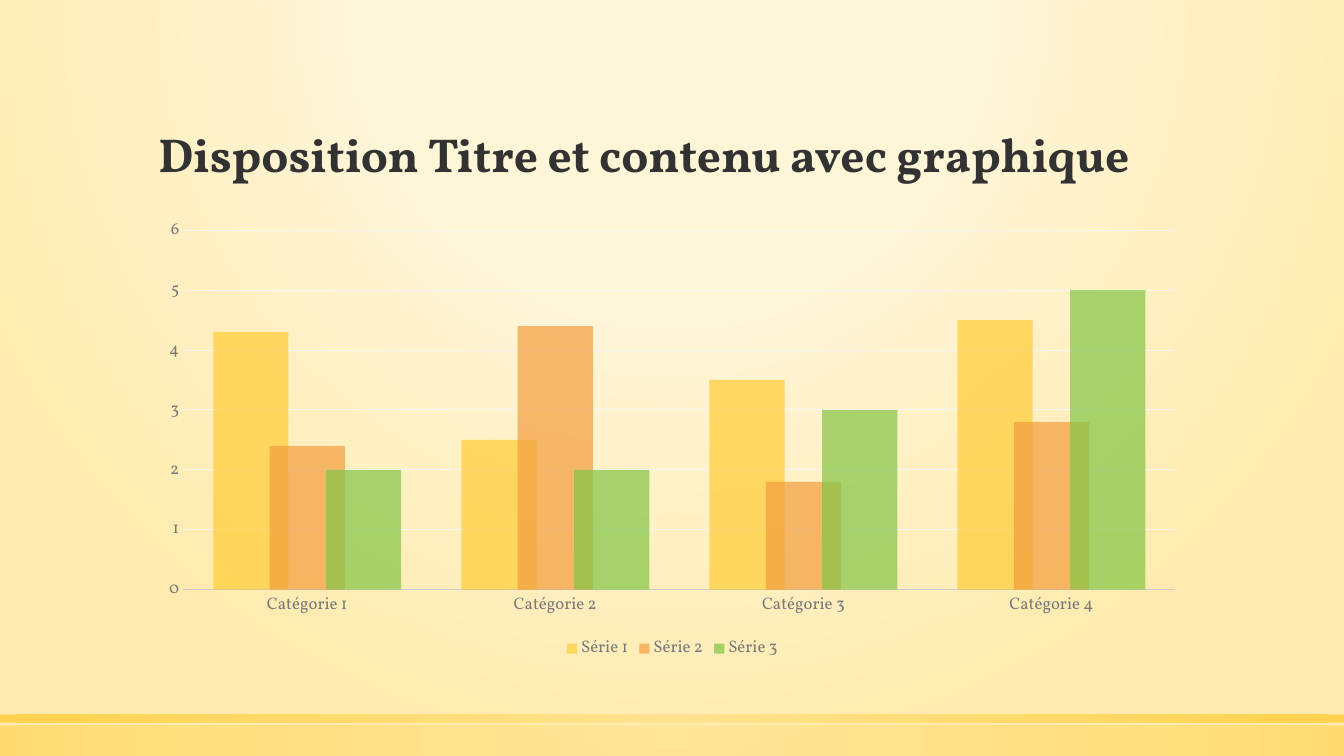
from dataclasses import dataclass

from lxml.etree import SubElement
from pptx import Presentation
from pptx.chart.data import CategoryChartData
from pptx.dml.color import RGBColor
from pptx.enum.chart import XL_CHART_TYPE, XL_LEGEND_POSITION, XL_TICK_MARK
from pptx.enum.shapes import MSO_SHAPE
from pptx.enum.text import MSO_ANCHOR, MSO_AUTO_SIZE, PP_ALIGN
from pptx.oxml import parse_xml
from pptx.oxml.ns import nsdecls, qn
from pptx.util import Pt


@dataclass(frozen=True)
class Theme:
    font: str = "Vollkorn"
    title_size: int = 34
    label_size: int = 12
    title: str = "323232"
    label: str = "7A7A7A"
    axis: str = "CCCCCC"
    grid: str = "F5F5F5"
    background_light: str = "FFF5D7"
    background_dark: str = "FFEBAF"
    band_light: str = "FFE186"
    band_dark: str = "FFCD36"
    series: tuple = ("FFCD36", "F29E3E", "83C546")
    series_opacity: int = 70


THEME = Theme()
CONTENT_LEFT, CONTENT_WIDTH = 105.84, 748.8
SLIDE_WIDTH, SLIDE_HEIGHT = 960, 540
CATEGORIES = [f"Catégorie {number}" for number in range(1, 5)]
SERIES = {
    "Série 1": (4.3, 2.5, 3.5, 4.5),
    "Série 2": (2.4, 4.4, 1.8, 2.8),
    "Série 3": (2, 2, 3, 5),
}


def set_font(font, size, color, bold=False):
    font.name = THEME.font
    font.size = Pt(size)
    font.bold = bold
    font.color.rgb = RGBColor.from_string(color)


def set_line(line, color, width):
    line.color.rgb = RGBColor.from_string(color)
    line.width = Pt(width)


def apply_radial_gradient(fill, element, stops, top, bottom):
    fill.solid()
    fill.fore_color.rgb = RGBColor.from_string(stops[0][1])
    stop_xml = "".join(
        f'<a:gs pos="{position * 1000}"><a:srgbClr val="{color}">'
        f'<a:alpha val="{opacity * 1000}"/></a:srgbClr></a:gs>'
        for position, color, opacity in stops
    )
    gradient = parse_xml(
        f'<a:gradFill {nsdecls("a")} rotWithShape="1"><a:gsLst>{stop_xml}</a:gsLst>'
        f'<a:path path="circle"><a:fillToRect l="50000" t="{top * 1000}" '
        f'r="50000" b="{bottom * 1000}"/></a:path></a:gradFill>'
    )
    solid = element.xpath(".//a:solidFill")[0]
    solid.getparent().replace(solid, gradient)


def paint_background(slide):
    stops = (
        (0, THEME.background_light, 59),
        (40, THEME.background_light, 66),
        (100, THEME.background_dark, 100),
    )
    apply_radial_gradient(slide.background.fill, slide.element, stops, -80, 180)


def add_band(slide, top, height, opacity):
    band = slide.shapes.add_shape(
        MSO_SHAPE.RECTANGLE, 0, Pt(top), Pt(SLIDE_WIDTH), Pt(height)
    )
    band.shadow.inherit = False
    band.line.fill.background()
    stops = ((0, THEME.band_light, opacity), (100, THEME.band_dark, opacity))
    apply_radial_gradient(band.fill, band.element, stops, 50, 50)


def add_title(slide, text):
    title = slide.shapes.title
    title.left, title.top = Pt(CONTENT_LEFT), Pt(36.72)
    title.width, title.height = Pt(CONTENT_WIDTH), Pt(97.2)
    frame = title.text_frame
    frame.word_wrap = True
    frame.auto_size = MSO_AUTO_SIZE.NONE
    frame.vertical_anchor = MSO_ANCHOR.BOTTOM
    paragraph = frame.paragraphs[0]
    paragraph.alignment = PP_ALIGN.LEFT
    paragraph.line_spacing = 0.9
    run = paragraph.add_run()
    run.text = text
    set_font(run.font, THEME.title_size, THEME.title, bold=True)


def style_axis(axis):
    axis.major_tick_mark = XL_TICK_MARK.NONE
    axis.minor_tick_mark = XL_TICK_MARK.NONE
    set_font(axis.tick_labels.font, THEME.label_size, THEME.label)


def style_series(series, color):
    series.invert_if_negative = False
    fill = series.format.fill
    fill.solid()
    fill.fore_color.rgb = RGBColor.from_string(color)
    color_element = series.format.element.xpath(".//c:spPr//a:srgbClr")[0] \
        if hasattr(series.format, "element") \
        else series._element.xpath("./c:spPr/a:solidFill/a:srgbClr")[0]
    alpha = SubElement(color_element, qn("a:alpha"))
    alpha.set("val", str(THEME.series_opacity * 1000))


def add_column_chart(slide):
    data = CategoryChartData()
    data.categories = CATEGORIES
    for name, values in SERIES.items():
        data.add_series(name, values)
    chart = slide.shapes.add_chart(
        XL_CHART_TYPE.COLUMN_CLUSTERED,
        Pt(CONTENT_LEFT), Pt(149.76), Pt(CONTENT_WIDTH), Pt(324.72), data,
    ).chart
    set_font(chart.font, THEME.label_size, THEME.label)
    chart.has_title = False
    chart.has_legend = True
    chart.legend.position = XL_LEGEND_POSITION.BOTTOM
    chart.legend.include_in_layout = False
    set_font(chart.legend.font, THEME.label_size, THEME.label)

    plot = chart.plots[0]
    plot.vary_by_categories = False
    plot.gap_width, plot.overlap = 80, 25
    for series, color in zip(plot.series, THEME.series):
        style_series(series, color)

    style_axis(chart.category_axis)
    set_line(chart.category_axis.format.line, THEME.axis, 1.25)
    value_axis = chart.value_axis
    style_axis(value_axis)
    value_axis.minimum_scale, value_axis.maximum_scale = 0, 6
    value_axis.major_unit = 1
    value_axis.format.line.fill.background()
    value_axis.has_major_gridlines = True
    set_line(value_axis.major_gridlines.format.line, THEME.grid, 0.75)


def main():
    presentation = Presentation()
    presentation.slide_width = Pt(SLIDE_WIDTH)
    presentation.slide_height = Pt(SLIDE_HEIGHT)
    slide = presentation.slides.add_slide(presentation.slide_layouts[5])
    paint_background(slide)
    add_band(slide, top=518.4, height=21.6, opacity=50)
    add_band(slide, top=510.48, height=5.76, opacity=80)
    add_title(slide, "Disposition Titre et contenu avec graphique")
    add_column_chart(slide)
    presentation.save("out.pptx")


if __name__ == "__main__":
    main()
